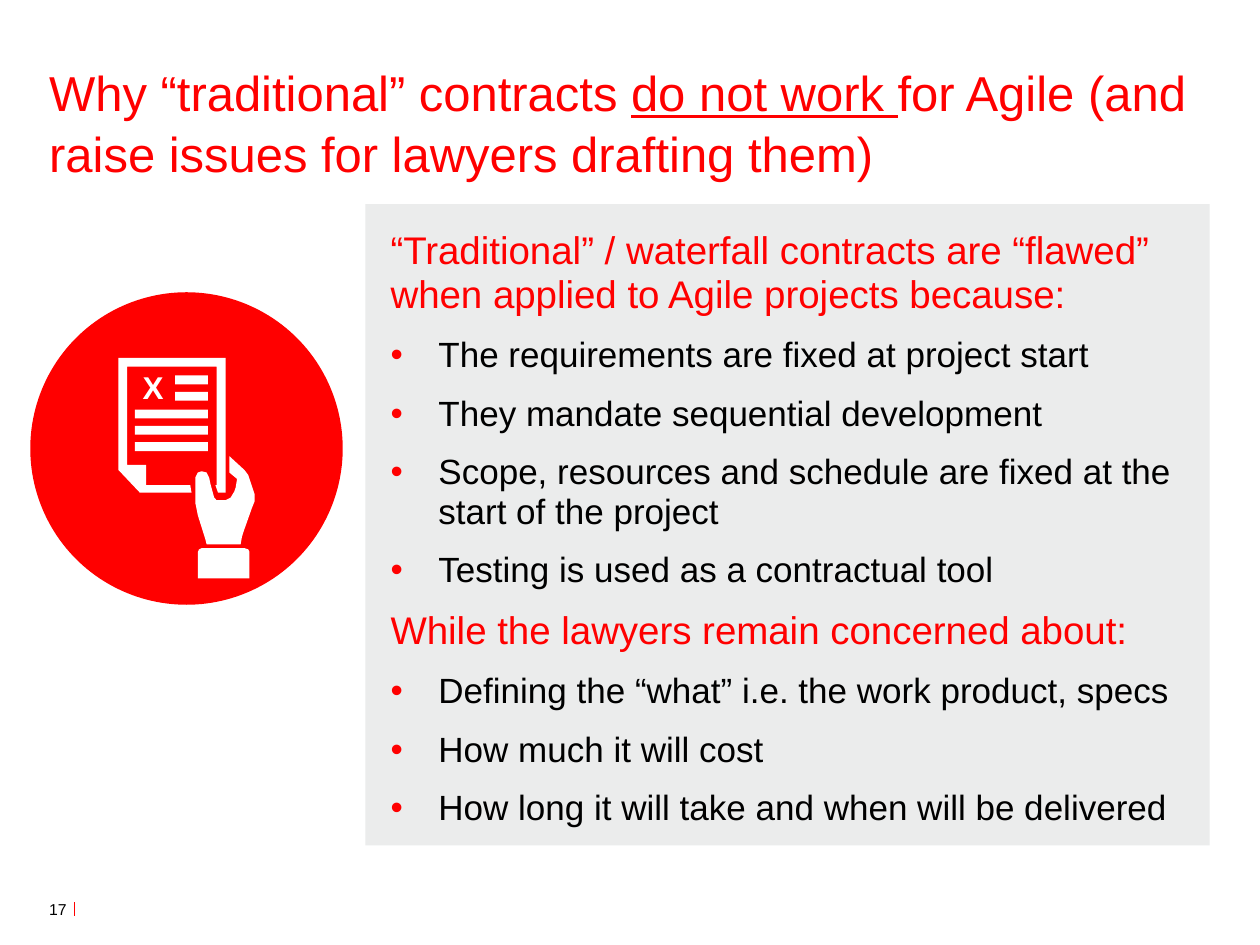
"""Build a slide on why traditional contracts do not suit Agile projects."""
from lxml.etree import SubElement
from pptx import Presentation
from pptx.dml.color import RGBColor
from pptx.enum.shapes import MSO_CONNECTOR as CONN, MSO_SHAPE as SHAPE
from pptx.enum.text import MSO_ANCHOR as ANCHOR, PP_ALIGN as ALIGN
from pptx.oxml.ns import qn
from pptx.util import Inches, Pt

RED = RGBColor(0xFF, 0x00, 0x00)
BLACK = RGBColor(0x00, 0x00, 0x00)
WHITE = RGBColor(0xFF, 0xFF, 0xFF)
GREY = RGBColor(0xEB, 0xEC, 0xEC)
FONT = "Arial"

TITLE = [
    ("Why “traditional” contracts ", False),
    ("do not work ", True),
    ("for Agile (and raise issues for lawyers drafting them)", False),
]
SECTIONS = [
    ("“Traditional” / waterfall contracts are “flawed” when applied to Agile projects because:", [
        "The requirements are fixed at project start",
        "They mandate sequential development",
        "Scope, resources and schedule are fixed at the start of the project",
        "Testing is used as a contractual tool",
    ]),
    ("While the lawyers remain concerned about:", [
        "Defining the “what” i.e. the work product, specs",
        "How much it will cost",
        "How long it will take and when will be delivered",
    ]),
]
PAGE = "17"

BOXES = {
    "title": (3.9, 6.27, 92.1, 13.6),
    "panel": (29, 21.6, 67, 67.87),
    "page": (3.9, 95.2, 2, 2.67),
    "disc": (2.4, 30.93, 24.8, 33.07),
    "mark": (10.5, 39.33, 3.3, 3.33),
    "rule": (5.9, 95.47, 0, 1.47),
}

SHEET = [(172, 291), (101, 291), (101, 369), (116, 369), (116, 385), (151, 385), (152, 391),
         (111, 391), (94, 373), (94, 284), (179, 284), (179, 391), (173, 391), (171, 385), (172, 385)]
CUFF = [(157, 459), (157, 438), (158, 436), (160, 435), (194, 435), (197, 436), (198, 438), (198, 459)]
HAND = [(188, 381), (188, 380), (182, 375), (182, 362), (194, 373), (197, 377), (201, 389), (202, 392),
        (202, 398), (200, 403), (194, 420), (192, 426), (191, 432), (164, 432), (163, 428), (157, 409),
        (155, 399), (155, 386), (155, 379), (157, 375), (160, 374), (164, 375), (166, 379), (167, 384),
        (170, 395), (172, 397), (179, 397), (183, 395), (186, 390), (187, 387)]
LINE_STARTS = [139, 139, 107, 107, 107]
LINE_RIGHT, LINE_TOP, LINE_PITCH, LINE_HEIGHT = 165, 298, 13.3, 7

prs = Presentation()
prs.slide_width, prs.slide_height = Inches(10), Inches(7.5)
s = prs.slides.add_slide(prs.slide_layouts[6])


def place(name):
    """Turn percentages of the slide into lengths."""
    sides = (prs.slide_width, prs.slide_height) * 2
    return [int(share * side / 100) for share, side in zip(BOXES[name], sides)]


def paint(sp, color):
    """Give a shape a flat fill without line or shadow."""
    sp.shadow.inherit = False
    sp.fill.solid()
    sp.fill.fore_color.rgb = color
    sp.line.fill.background()
    return sp


def frame(sp, inset=0, anchor=ANCHOR.TOP):
    """Set up wrapping, insets and anchor, and return the text frame."""
    tf = sp.text_frame
    tf.word_wrap, tf.vertical_anchor = True, anchor
    tf.margin_left = tf.margin_top = tf.margin_right = tf.margin_bottom = Inches(inset)
    return tf


def write(p, text, size=20, color=BLACK, bold=False, underline=False, align=ALIGN.LEFT):
    """Add a formatted run to a paragraph."""
    p.alignment = align
    r = p.add_run()
    r.text = text
    f = r.font
    f.name, f.size, f.bold, f.underline = FONT, Pt(size), bold, underline
    f.color.rgb = color


def bullet(p):
    """Give a paragraph a hanging red bullet."""
    pPr = p._p.get_or_add_pPr()
    pPr.set("marL", str(Inches(0.38)))
    pPr.set("indent", str(-Inches(0.38)))
    SubElement(SubElement(pPr, qn("a:buClr")), qn("a:srgbClr")).set("val", str(RED))
    SubElement(pPr, qn("a:buFont")).set("typeface", FONT)
    SubElement(pPr, qn("a:buChar")).set("char", "•")


def bar(i, left):
    """Return the outline of one text line on the sheet."""
    top = round(LINE_TOP + i * LINE_PITCH)
    bottom = top + LINE_HEIGHT
    return [(left, top), (LINE_RIGHT, top), (LINE_RIGHT, bottom), (left, bottom)]


rule = place("rule")
ln = s.shapes.add_connector(CONN.STRAIGHT, rule[0], rule[1], rule[0], rule[1] + rule[3])
ln.line.color.rgb, ln.line.width = RED, Pt(0.5)
SubElement(ln._element.spPr, qn("a:effectLst"))

p = frame(s.shapes.add_textbox(*place("title"))).paragraphs[0]
p.line_spacing = 1.05
for text, underline in TITLE:
    write(p, text, size=28, color=RED, underline=underline)

panel = paint(s.shapes.add_shape(SHAPE.RECTANGLE, *place("panel")), GREY)
tf = frame(panel, inset=0.2)
rows = [row for head, items in SECTIONS for row in [(head, True)] + [(t, False) for t in items]]
for i, (text, is_head) in enumerate(rows):
    p = tf.add_paragraph() if i else tf.paragraphs[0]
    p.line_spacing, p.space_after = 0.95, Pt(10.6)
    if is_head:
        write(p, text, size=22, color=RED)
    else:
        bullet(p)
        write(p, text)

write(frame(s.shapes.add_textbox(*place("page"))).paragraphs[0], PAGE, size=9)

paint(s.shapes.add_shape(SHAPE.OVAL, *place("disc")), RED)
outlines = [bar(i, left) for i, left in enumerate(LINE_STARTS)] + [SHEET, CUFF, HAND]
pen = s.shapes.build_freeform(*outlines[0][0], scale=Inches(0.01))
for i, outline in enumerate(outlines):
    if i:
        pen.move_to(*outline[0])
    pen.add_line_segments(outline[1:], close=True)
paint(pen.convert_to_shape(), WHITE)

mark = paint(s.shapes.add_shape(SHAPE.RECTANGLE, *place("mark")), RED)
p = frame(mark, anchor=ANCHOR.MIDDLE).paragraphs[0]
write(p, "X", size=18, color=WHITE, bold=True, align=ALIGN.CENTER)

prs.save("out.pptx")
